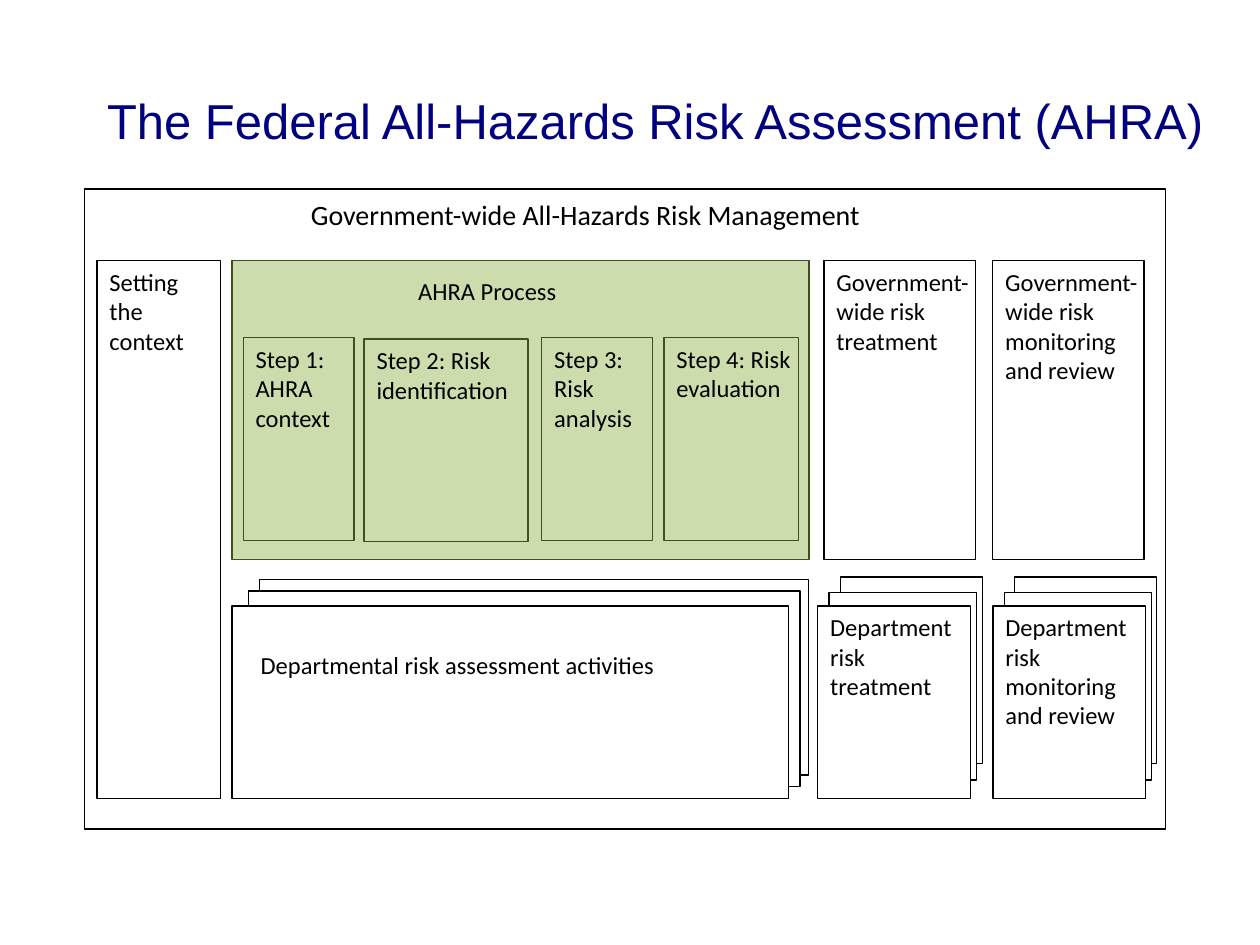
from dataclasses import dataclass
from typing import Optional

import pptx
import pptx.util
from pptx.dml.color import RGBColor
from pptx.enum.shapes import MSO_SHAPE
from pptx.enum.text import MSO_ANCHOR, PP_ALIGN
from pptx.util import Inches

COLORS = {
    "navy": "000080",
    "black": "000000",
    "white": "FFFFFF",
    "green": "CCDCAC",
    "olive": "404F21",
}


@dataclass
class Panel:
    left: float
    top: float
    width: float
    height: float
    text: str = ""
    fill: str = "white"
    line: Optional[str] = "black"
    size: int = 14
    right_inset: float = 0.05


def color(name: str) -> RGBColor:
    return RGBColor.from_string(COLORS[name])


def write_text(frame, text: str, *, size: int, font: str, ink: str,
               anchor=MSO_ANCHOR.TOP, space_after: int = 0) -> None:
    frame.word_wrap = True
    frame.vertical_anchor = anchor
    para = frame.paragraphs[0]
    para.alignment = PP_ALIGN.LEFT
    para.space_after = pptx.util.Pt(space_after)
    span = para.add_run()
    span.text = text
    span.font.name = font
    span.font.size = pptx.util.Pt(size)
    span.font.color.rgb = color(ink)


def draw_panel(page, panel: Panel) -> None:
    kind = MSO_SHAPE.RECTANGLE if panel.text else MSO_SHAPE.FLOWCHART_PROCESS
    box = page.shapes.add_shape(kind, Inches(panel.left), Inches(panel.top),
                                Inches(panel.width), Inches(panel.height))
    box.shadow.inherit = False
    box.fill.solid()
    box.fill.fore_color.rgb = color(panel.fill)
    if panel.line:
        box.line.color.rgb = color(panel.line)
        box.line.width = pptx.util.Pt(0.75)
    else:
        box.line.fill.background()
    if panel.text:
        frame = box.text_frame
        frame.margin_left = Inches(0.1)
        frame.margin_right = Inches(panel.right_inset)
        frame.margin_top = frame.margin_bottom = Inches(0.05)
        write_text(frame, panel.text, size=panel.size, font="Calibri",
                   ink="black", space_after=10)


def step(left: float, width: float, text: str, top: float = 2.68,
         right_inset: float = 0.05) -> Panel:
    return Panel(left, top, width, 1.61, text, "green", "olive",
                 right_inset=right_inset)


def department_stack(lefts: tuple[float, float, float], text: str) -> list[Panel]:
    back, middle, front = lefts
    return [
        Panel(back, 4.58, 1.13, 1.48),
        Panel(middle, 4.7, 1.17, 1.49),
        Panel(front, 4.81, 1.21, 1.53, text),
    ]


PANELS = [
    # Government-wide frame and context column
    Panel(0.67, 1.5, 8.58, 5.08),
    Panel(0.77, 2.07, 0.98, 4.27, "Setting the context", right_inset=0.1),
    # AHRA process with its four steps
    Panel(1.84, 2.07, 4.58, 2.37, fill="green", line="olive"),
    step(1.93, 0.88, "Step 1: AHRA context", right_inset=0.1),
    step(2.89, 1.3, "Step 2: Risk identification", top=2.69),
    step(4.3, 0.88, "Step 3: Risk analysis"),
    step(5.27, 1.07, "Step 4: Risk evaluation"),
    # Headings
    Panel(3.22, 2.14, 1.59, 0.45, "AHRA Process", "green", "green"),
    Panel(2.37, 1.52, 4.94, 0.45, "Government-wide All-Hazards Risk Management",
          line=None, size=16),
    # Government-wide treatment and monitoring
    Panel(6.54, 2.07, 1.2, 2.37, "Government-wide risk treatment"),
    Panel(7.88, 2.07, 1.2, 2.37, "Government-wide risk monitoring and review"),
    # Department stacks
    *department_stack((6.67, 6.58, 6.49), "Department risk treatment"),
    *department_stack((8.05, 7.97, 7.88), "Department risk monitoring and review"),
    # Departmental assessment stack and its label
    Panel(2.06, 4.6, 4.36, 1.55),
    Panel(1.97, 4.69, 4.38, 1.55),
    Panel(1.84, 4.81, 4.42, 1.53),
    Panel(1.97, 5.11, 3.82, 0.94, "Departmental risk assessment activities",
          line=None),
]


def main() -> None:
    deck = pptx.Presentation()
    deck.slide_width, deck.slide_height = Inches(10), Inches(7.5)
    page = deck.slides.add_slide(deck.slide_layouts[5])

    # Title
    title = page.shapes.title
    title.left, title.top = Inches(0.75), Inches(0.33)
    title.width, title.height = Inches(9.25), Inches(1.25)
    write_text(title.text_frame, "The Federal All-Hazards Risk Assessment (AHRA)",
               size=28, font="Arial", ink="navy", anchor=MSO_ANCHOR.MIDDLE)

    # Diagram, from back to front
    for panel in PANELS:
        draw_panel(page, panel)

    deck.save("out.pptx")


if __name__ == "__main__":
    main()
